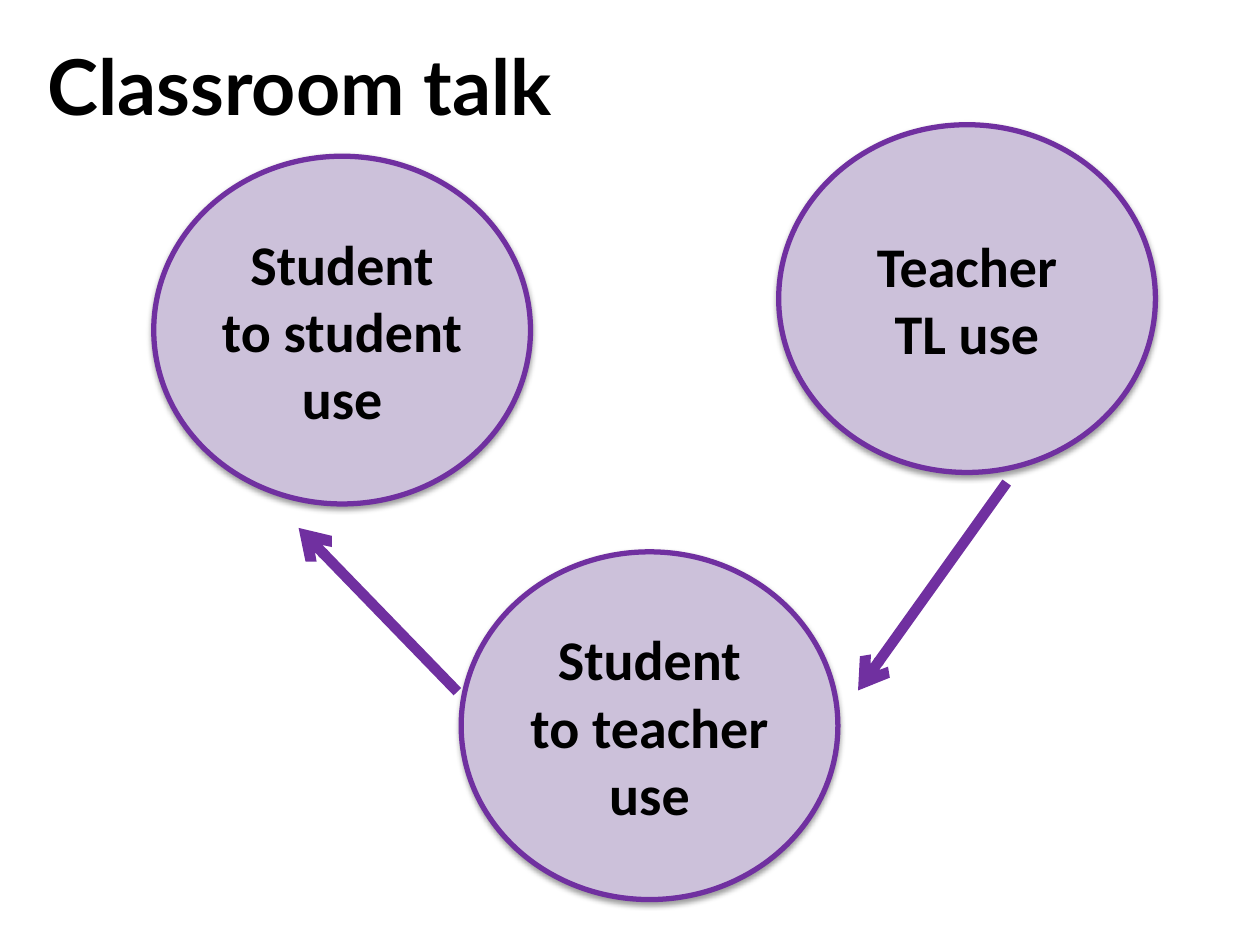
from lxml.etree import SubElement
from pptx import Presentation
from pptx.dml.color import RGBColor
from pptx.enum.shapes import MSO_CONNECTOR as Connector, MSO_SHAPE as Shape
from pptx.enum.text import MSO_ANCHOR as Anchor, PP_ALIGN as Align
from pptx.oxml import parse_xml
from pptx.oxml.ns import nsdecls, qn
from pptx.util import Inches, Pt

BLACK = RGBColor(0x00, 0x00, 0x00)
LILAC = RGBColor(0xCC, 0xC1, 0xDA)
PURPLE = RGBColor(0x70, 0x30, 0xA0)


class TalkSlide:
    """Style and drawing methods for the classroom talk slide."""

    title_font, body_font = "Lato", "Calibri"
    title_size, body_size = Pt(44), Pt(32)
    outline, arrow_width = Pt(3), Pt(6)
    circle_width, circle_height = Inches(2.99), Inches(2.76)

    def __init__(self, slide):
        self.shapes = slide.shapes

    def label(self, frame, wording, font, size, align):
        frame.word_wrap = True
        frame.vertical_anchor = Anchor.MIDDLE
        paragraph = frame.paragraphs[0]
        paragraph.alignment = align
        run = paragraph.add_run()
        run.text = wording
        run.font.name = font
        run.font.size = size
        run.font.bold = True
        run.font.color.rgb = BLACK

    def title(self, wording, left, top, width, height):
        heading = self.shapes.add_textbox(
            Inches(left), Inches(top), Inches(width), Inches(height))
        self.label(heading.text_frame, wording, self.title_font,
                   self.title_size, Align.LEFT)

    def circle(self, wording, left, top):
        circle = self.shapes.add_shape(
            Shape.OVAL, Inches(left), Inches(top),
            self.circle_width, self.circle_height)
        circle.fill.solid()
        circle.fill.fore_color.rgb = LILAC
        circle.line.color.rgb = PURPLE
        circle.line.width = self.outline
        circle.shadow.inherit = False
        effects = circle._element.spPr.find(qn("a:effectLst"))
        effects.append(parse_xml(
            f'<a:outerShdw {nsdecls("a")} blurRad="{Pt(3.1)}" dist="{Pt(1.6)}"'
            ' dir="5400000" rotWithShape="0"><a:srgbClr val="000000">'
            '<a:alpha val="38000"/></a:srgbClr></a:outerShdw>'))
        self.label(circle.text_frame, wording, self.body_font,
                   self.body_size, Align.CENTER)

    def arrow(self, start, end):
        arrow = self.shapes.add_connector(
            Connector.STRAIGHT, *map(Inches, start + end))
        arrow.line.color.rgb = PURPLE
        arrow.line.width = self.arrow_width
        SubElement(arrow.line._get_or_add_ln(), qn("a:tailEnd"), type="arrow")
        SubElement(arrow._element.spPr, qn("a:effectLst"))


def main():
    deck = Presentation()
    deck.slide_width, deck.slide_height = Inches(10), Inches(7.5)
    talk = TalkSlide(deck.slides.add_slide(deck.slide_layouts[6]))
    talk.title("Classroom talk", 0.28, 0.05, 9, 1.25)
    talk.circle("Teacher TL use", 6.18, 0.99)
    talk.arrow((7.99, 3.83), (6.81, 5.48))
    talk.circle("Student to teacher use", 3.66, 4.38)
    talk.circle("Student to student use", 1.22, 1.24)
    talk.arrow((3.63, 5.49), (2.37, 4.19))
    deck.save("out.pptx")


if __name__ == "__main__":
    main()
